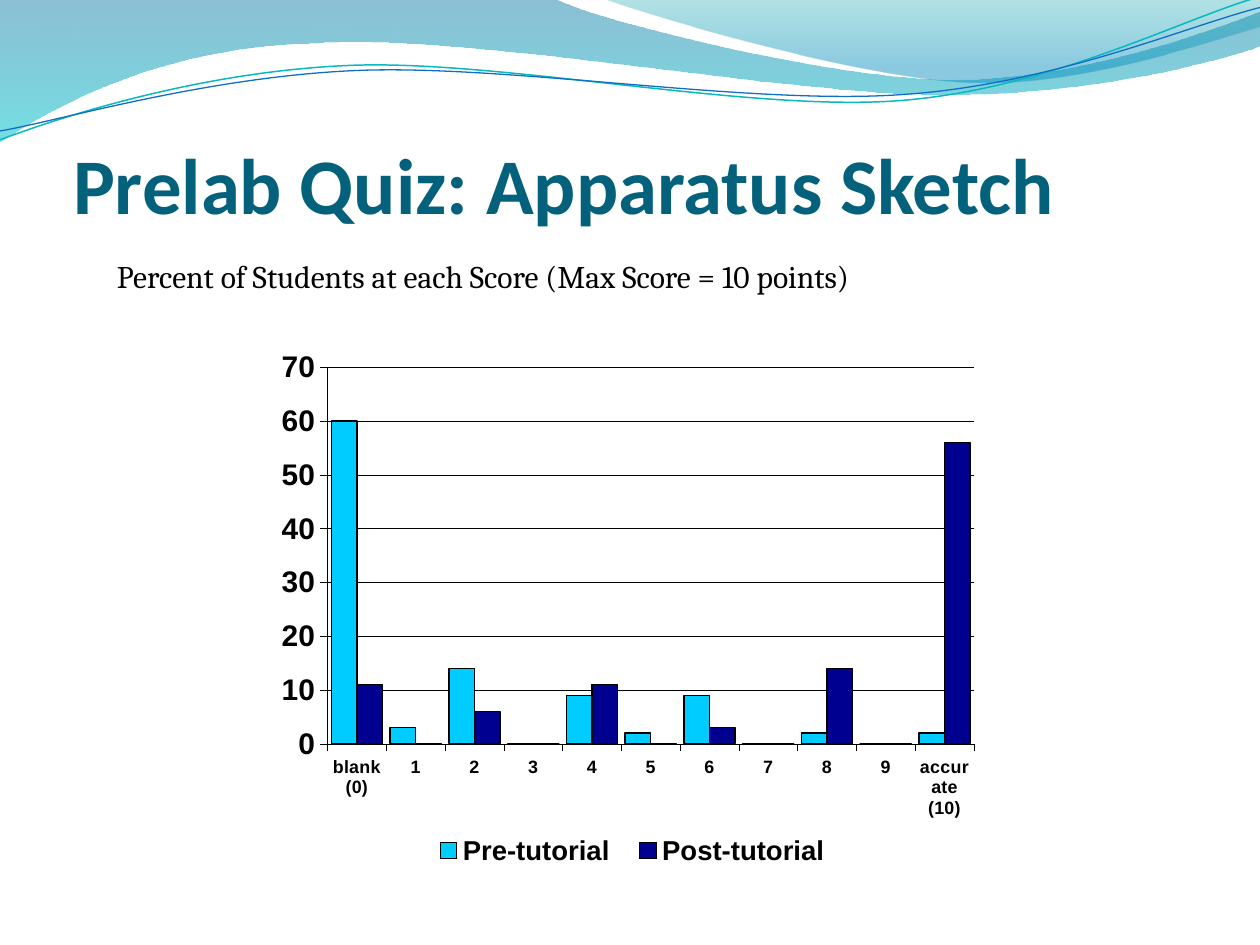
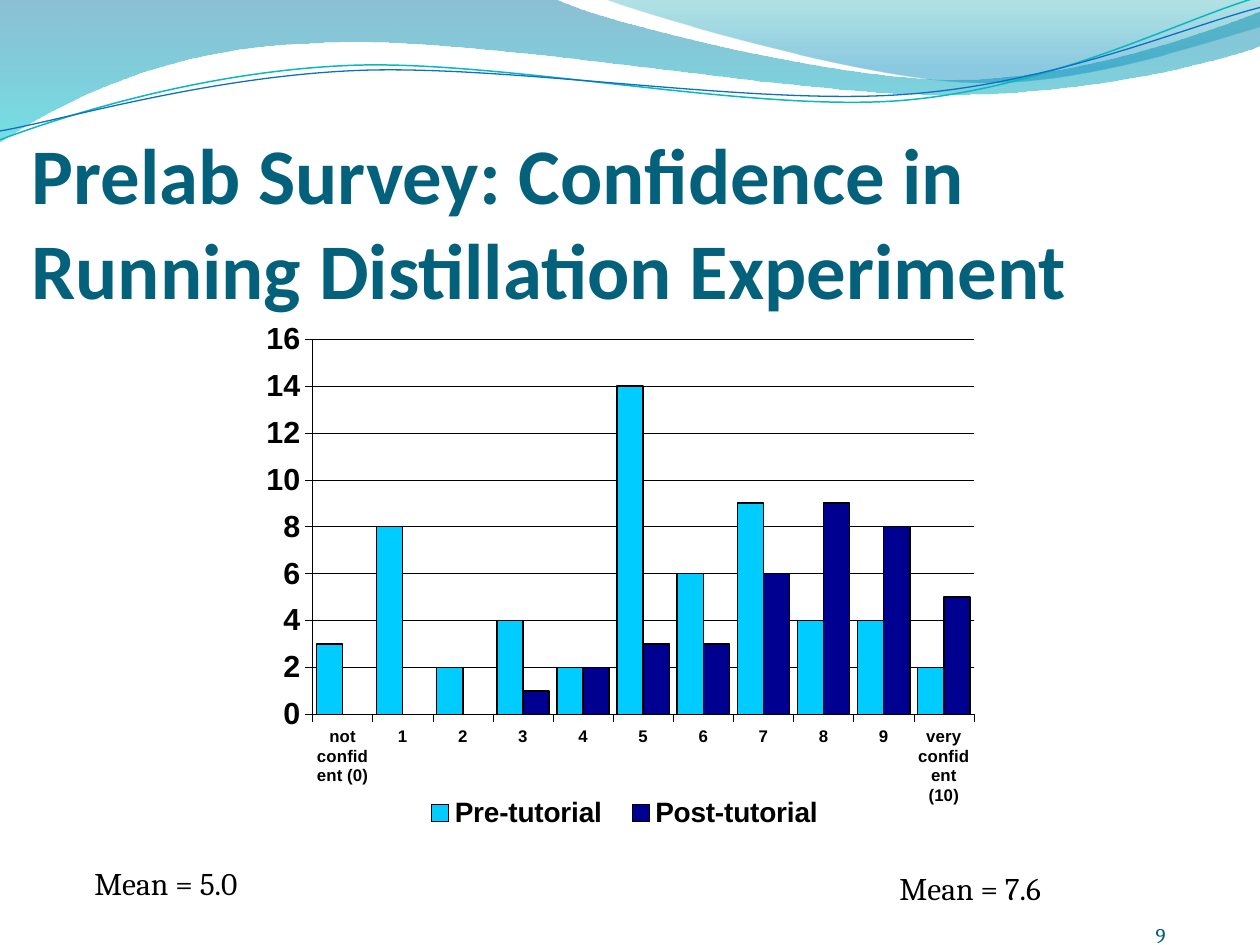
from math import cos, radians, sin

from lxml.etree import SubElement
from pptx import Presentation
from pptx.chart.data import CategoryChartData
from pptx.dml.color import RGBColor
from pptx.enum.chart import XL_CHART_TYPE as ChartType
from pptx.enum.chart import XL_LEGEND_POSITION as LegendPosition
from pptx.enum.chart import XL_TICK_LABEL_POSITION as LabelPosition
from pptx.enum.chart import XL_TICK_MARK as TickMark
from pptx.enum.text import MSO_ANCHOR as Anchor
from pptx.enum.text import PP_ALIGN as Align
from pptx.oxml.ns import qn
from pptx.util import Emu, Pt

PX = 9144
TILT = 357.3
COLORS = {
    "title": "04617B", "number": "045D75", "text": "000000",
    "pre": "00CCFF", "post": "000090",
    "wave_top": "0074A1", "wave_bottom": "00C6CF",
    "crest_top": "00A1A9", "crest_bottom": "008BBF",
    "teal_line": "0AB8BF", "blue_line": "0F6FC6",
}
BAND_BOX = (0, 0, 1000, 114)
WAVE = [
    (0, 0), (440, -1), (476, 17, 664, 63, 758, 63),
    (853, 63, 958, 26, 1000, 9), (1001, 36),
    (983, 44, 870, 76, 746, 75), (622, 75, 382, 28, 257, 34),
    (129, 36, 46, 83, -1, 113), (0, 0),
]
CREST = [
    (479, -1), (509, 11, 682, 62, 769, 65),
    (856, 69, 961, 32, 1000, 21), (1000, 0), (479, -1),
]
TEAL_LINE = [
    (0, 111), (48, 93, 158, 57, 277, 52),
    (395, 47, 593, 89, 713, 80), (833, 71, 938, 15, 998, -2),
]
BLUE_LINE = [
    (0, 104), (47, 96, 164, 61, 283, 56),
    (403, 51, 597, 84, 717, 75), (836, 67, 941, 21, 1000, 6),
]


def px(value):
    return Emu(round(value * PX))


def place(box):
    return [px(length) for length in box]


def rgb(name):
    return RGBColor.from_string(COLORS[name])


def pairs(step):
    return list(zip(step[::2], step[1::2]))


def turn(outline, pivot, degrees):
    c, s = cos(radians(degrees)), sin(radians(degrees))
    px0, py0 = pivot
    return [
        tuple(value for x, y in pairs(step) for value in (
            px0 + (x - px0) * c - (y - py0) * s,
            py0 + (x - px0) * s + (y - py0) * c))
        for step in outline]


def add_outline(page, box, outline, close):
    steps = [[(px(box[0] + x), px(box[1] + y)) for x, y in pairs(step)]
             for step in outline]
    ends = [step[-1] for step in steps]
    builder = page.shapes.build_freeform(*ends[0], scale=1.0)
    builder.add_line_segments(ends[1:], close=close)
    shape = builder.convert_to_shape()
    shape.shadow.inherit = False
    segments = list(shape._element.spPr.iter(qn("a:lnTo")))
    for segment, step in zip(segments, steps[1:]):
        if len(step) == 1:
            continue
        parent = segment.getparent()
        curve = SubElement(parent, qn("a:cubicBezTo"))
        parent.replace(segment, curve)
        for x, y in step:
            point = SubElement(curve, qn("a:pt"))
            point.set("x", str(x - shape.left))
            point.set("y", str(y - shape.top))
    return shape


def add_wave(page, box, outline, stops):
    shape = add_outline(page, box, outline, True)
    shape.line.fill.background()
    shape.fill.gradient()
    shape.fill.gradient_angle = 270
    for stop, (position, color, opacity) in zip(shape.fill.gradient_stops, stops):
        stop.position = position
        stop.color.rgb = rgb(color)
    tints = shape._element.spPr.iter(qn("a:srgbClr"))
    for tint, (position, color, opacity) in zip(tints, stops):
        SubElement(tint, qn("a:alpha")).set("val", str(opacity * 1000))


def add_wave_line(page, box, outline, color, width):
    level = turn(outline, (box[2] / 2, box[3] / 2), 360 - TILT)
    shape = add_outline(page, box, level, False)
    shape.rotation = TILT
    shape.fill.background()
    set_line(shape.line, color, width)


def set_line(line, color, width):
    line.color.rgb = rgb(color)
    line.width = Pt(width)


def set_font(font, name, size, color="text", bold=False):
    font.name = name
    font.size = Pt(size)
    font.bold = bold
    font.color.rgb = rgb(color)


def add_text(page, box, text, font="Cambria", size=18, color="text", bold=False,
             align=Align.LEFT, anchor=Anchor.TOP, insets=(10, 5, 10, 5)):
    frame = page.shapes.add_textbox(*place(box)).text_frame
    frame.word_wrap = True
    frame.vertical_anchor = anchor
    (frame.margin_left, frame.margin_top,
     frame.margin_right, frame.margin_bottom) = place(insets)
    para = frame.paragraphs[0]
    para.alignment = align
    span = para.add_run()
    span.text = text
    set_font(span.font, font, size, color, bold)


def add_band(page, box):
    add_wave(page, box, WAVE, [(0, "wave_top", 45), (1, "wave_bottom", 55)])
    add_wave(page, box, CREST, [(0, "crest_top", 30), (0.8, "crest_bottom", 45)])
    add_wave_line(page, box, TEAL_LINE, "teal_line", 0.85)
    add_wave_line(page, box, BLUE_LINE, "blue_line", 0.75)


def share_band(deck, layout):
    for holder in list(layout.placeholders):
        layout.shapes._spTree.remove(holder._element)
    page = deck.slides.add_slide(layout)
    add_band(page, BAND_BOX)
    for shape in list(page.shapes):
        layout.shapes._spTree.append(shape._element)
    return page


def add_title(page, box, text):
    add_text(page, box, text, font="Calibri", size=45, color="title", bold=True,
             anchor=Anchor.BOTTOM, insets=(0, 5, 0, 0))


def set_layout(element, position, box, inner, **modes):
    for old in element.findall(qn("c:layout")):
        element.remove(old)
    layout = SubElement(element, qn("c:layout"))
    element.insert(position, layout)
    manual = SubElement(layout, qn("c:manualLayout"))
    sizes = (box[2], box[3]) * 2
    shares = {key: length / size for key, length, size in zip("xywh", inner, sizes)}
    values = {**modes, "xMode": "edge", "yMode": "edge", **shares}
    for tag, value in values.items():
        SubElement(manual, qn(f"c:{tag}")).set("val", str(value))


def style_axis(axis, size):
    axis.major_tick_mark = TickMark.OUTSIDE
    axis.minor_tick_mark = TickMark.NONE
    set_line(axis.format.line, "text", 0.21)
    set_font(axis.tick_labels.font, "Arial", size, bold=True)


def add_score_chart(page, box, ends, pre, post, top, unit, sizes,
                    plot_box, legend_box, legend_side):
    value_size, score_size, legend_size = sizes
    data = CategoryChartData()
    data.categories = [ends[0], *map(str, range(1, 10)), ends[1]]
    data.add_series("Pre-tutorial", pre)
    data.add_series("Post-tutorial", post)
    chart = page.shapes.add_chart(
        ChartType.COLUMN_CLUSTERED, *place(box), data).chart
    chart.has_title = False
    set_font(chart.font, "Arial", value_size, bold=True)

    plot = chart.plots[0]
    plot.vary_by_categories = False
    plot.gap_width = 30
    plot.overlap = 0
    for series, color in zip(plot.series, ("pre", "post")):
        series.format.fill.solid()
        series.format.fill.fore_color.rgb = rgb(color)
        set_line(series.format.line, "text", 0.85)

    scores, values = chart.category_axis, chart.value_axis
    style_axis(scores, score_size)
    scores.tick_label_position = LabelPosition.LOW
    scores._element.find(qn("c:txPr")).find(qn("a:bodyPr")).set("rot", "0")
    style_axis(values, value_size)
    values.minimum_scale, values.maximum_scale = 0, top
    values.major_unit = unit
    values.has_major_gridlines = True
    set_line(values.major_gridlines.format.line, "text", 0.21)

    chart.has_legend = True
    legend = chart.legend
    legend.position = legend_side
    legend.include_in_layout = False
    set_font(legend.font, "Arial", legend_size, bold=True)
    set_layout(plot._element.getparent(), 0, box, plot_box, layoutTarget="inner")
    set_layout(legend._element, 1, box, legend_box)


def build_quiz(page):
    add_title(page, (58, 100, 942, 83), "Prelab Quiz: Apparatus Sketch")
    add_score_chart(
        page, (216, 278, 573, 415), ("blank (0)", "accurate (10)"),
        pre=(60, 3, 14, 0, 9, 2, 9, 0, 2, 0, 2),
        post=(11, 0, 6, 0, 11, 0, 3, 0, 14, 0, 56),
        top=70, unit=10, sizes=(17.1, 10.2, 15.7),
        plot_box=(44, 12, 513, 300), legend_box=(117, 382, 338, 30),
        legend_side=LegendPosition.BOTTOM)
    add_text(page, (83, 199, 892, 50),
             "Percent of Students at each Score (Max Score = 10 points)")


def build_survey(page):
    add_text(page, (717, 702, 208, 50), "9", size=12, color="number",
             align=Align.RIGHT, anchor=Anchor.BOTTOM, insets=(0, 0, 0, 0))
    add_title(page, (25, 167, 942, 83),
              "Prelab Survey: Confidence in Running Distillation Experiment")
    add_score_chart(
        page, (203, 255, 586, 425), ("not confident (0)", "very confident (10)"),
        pre=(3, 8, 2, 4, 2, 14, 6, 9, 4, 4, 2),
        post=(0, 0, 0, 1, 2, 3, 3, 6, 9, 8, 5),
        top=16, unit=2, sizes=(17.4, 9.6, 16),
        plot_box=(45, 14, 525, 298), legend_box=(123, 375, 340, 30),
        legend_side=LegendPosition.RIGHT)
    add_text(page, (65, 681, 188, 50), "Mean = 5.0")
    add_text(page, (704, 685, 188, 50), "Mean = 7.6")


def main():
    deck = Presentation()
    deck.slide_width, deck.slide_height = px(1000), px(750)
    layout = deck.slide_layouts[6]
    build_quiz(share_band(deck, layout))
    build_survey(deck.slides.add_slide(layout))
    deck.save("out.pptx")


if __name__ == "__main__":
    main()
